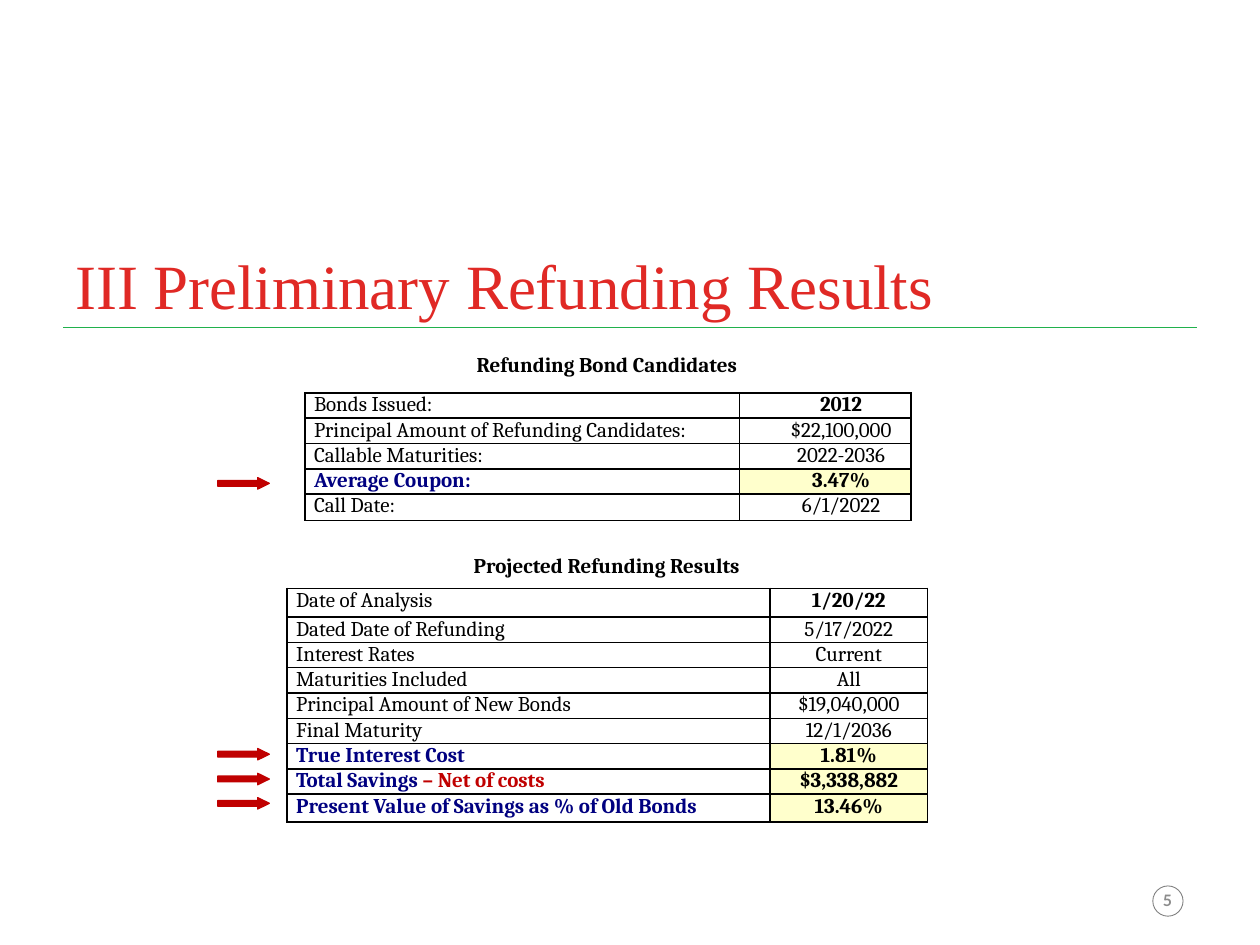
from lxml import etree
from pptx import Presentation
from pptx.dml.color import RGBColor
from pptx.enum import shapes, text
from pptx.oxml import ns
from pptx.util import Cm, Pt

COLORS = {"title": "E02925", "rule": "20B14C", "ring": "808080", "number": "8C8C8C",
          "text": "000000", "key": "000080", "accent": "C00000", "highlight": "FFFFCC"}
BODY = "Cambria"
TITLE = "III\tPreliminary Refunding Results"
PAGE = "5"

# Each row: label runs as (text, colour), value, style
CANDIDATES = [
    ([("Bonds Issued:", "text")], "2012", "head"),
    ([("Principal Amount of Refunding Candidates:", "text")], "$22,100,000", ""),
    ([("Callable Maturities:", "text")], "2022-2036", ""),
    ([("Average Coupon:", "key")], "3.47%", "key"),
    ([("Call Date:", "text")], "6/1/2022", ""),
]
RESULTS = [
    ([("Date of Analysis", "text")], "1/20/22", "head"),
    ([("Dated Date of Refunding", "text")], "5/17/2022", ""),
    ([("Interest Rates", "text")], "Current", ""),
    ([("Maturities Included", "text")], "All", ""),
    ([("Principal Amount of New Bonds", "text")], "$19,040,000", ""),
    ([("Final Maturity", "text")], "12/1/2036", ""),
    ([("True Interest Cost", "key")], "1.81%", "key"),
    ([("Total Savings ", "key"), ("– Net of costs", "accent")], "$3,338,882", "key"),
    ([("Present Value of Savings as % of Old Bonds", "key")], "13.46%", "key"),
]
# heading, heading box, heading alignment, rows, left, top, column widths,
# first and last row heights, value indent
TABLES = [
    ("Refunding Bond Candidates", (6.99, 6.96, 10.49, 0.76), text.PP_ALIGN.CENTER,
     CANDIDATES, 6.15, 7.92, (8.76, 3.45), (0.51, 0.53), 0.64),
    ("Projected Refunding Results", (9.3, 11.02, 8.81, 0.76), text.PP_ALIGN.LEFT,
     RESULTS, 5.79, 11.86, (9.73, 3.18), (0.58, 0.56), 0),
]
ROW_H = 0.51
ARROW_TOPS = [9.63, 15.09, 15.59, 16.08]


def rgb(name):
    return RGBColor.from_string(COLORS[name])


def add_run(p, words, size, font, color, bold=False):
    r = p.add_run()
    r.text = words
    r.font.size, r.font.name, r.font.bold = Pt(size), font, bold
    r.font.color.rgb = rgb(color)


def add_box(slide, box, anchor, align):
    """Add a wrapping text box and return its first paragraph."""
    tf = slide.shapes.add_textbox(*map(Cm, box)).text_frame
    tf.word_wrap = True
    tf.vertical_anchor = anchor
    p = tf.paragraphs[0]
    p.alignment = align
    return p


def set_indent(p, left, first=0):
    pPr = p._p.get_or_add_pPr()
    pPr.set("marL", str(Cm(left)))
    pPr.set("indent", str(Cm(first)))


def add_borders(cell):
    tcPr = cell._tc.get_or_add_tcPr()
    for i, side in enumerate(("lnL", "lnR", "lnT", "lnB")):
        ln = etree.Element(ns.qn("a:" + side), w=str(Pt(1)))
        fill = etree.SubElement(ln, ns.qn("a:solidFill"))
        etree.SubElement(fill, ns.qn("a:srgbClr"), val=COLORS["text"])
        tcPr.insert(i, ln)


def fill_cell(cell, runs, bold, space):
    cell.margin_left = cell.margin_right = Cm(0.18)
    cell.margin_top = cell.margin_bottom = 0
    p = cell.text_frame.paragraphs[0]
    if space:
        p.space_before = Pt(1)
    for words, color in runs:
        add_run(p, words, 12, BODY, color, bold)
    return p


def add_grid(slide, rows, left, top, widths, ends, indent):
    heights = [ends[0]] + [ROW_H] * (len(rows) - 2) + [ends[1]]
    tbl = slide.shapes.add_table(len(rows), 2, Cm(left), Cm(top),
                                 Cm(sum(widths)), Cm(sum(heights))).table
    tbl.first_row = tbl.horz_banding = False
    for col, width in zip(tbl.columns, widths):
        col.width = Cm(width)
    for i, (label, value, style) in enumerate(rows):
        tbl.rows[i].height = Cm(heights[i])
        name, amount = tbl.cell(i, 0), tbl.cell(i, 1)
        fill_cell(name, label, style == "key", i > 0)
        p = fill_cell(amount, [(value, "text")], style != "", i > 0)
        p.alignment = text.PP_ALIGN.CENTER
        set_indent(p, indent)
        for cell in (name, amount):
            cell.fill.background()
            if cell is amount and style == "key":
                cell.fill.solid()
                cell.fill.fore_color.rgb = rgb("highlight")
            add_borders(cell)


def add_frame(slide):
    """Add the title, its rule and the page number."""
    rule = slide.shapes.add_connector(shapes.MSO_CONNECTOR.STRAIGHT,
                                      Cm(1.27), Cm(6.6), Cm(24.13), Cm(6.6))
    rule.line.color.rgb = rgb("rule")
    rule.line.width = Pt(1)
    etree.SubElement(rule._element.spPr, ns.qn("a:effectLst"))

    ring = slide.shapes.add_shape(shapes.MSO_SHAPE.OVAL, Cm(23.24), Cm(17.86),
                                  Cm(0.61), Cm(0.61))
    ring.shadow.inherit = False
    ring.fill.background()
    ring.line.color.rgb = rgb("ring")
    ring.line.width = Pt(0.5)

    p = add_box(slide, (1.27, 3.43, 22.86, 3.18), text.MSO_ANCHOR.BOTTOM, text.PP_ALIGN.LEFT)
    set_indent(p, 1.57, -1.57)
    p.line_spacing = Pt(37)
    add_run(p, TITLE, 36, "Times New Roman", "title")

    p = add_box(slide, (23.04, 17.96, 0.99, 0.38), text.MSO_ANCHOR.MIDDLE,
                text.PP_ALIGN.CENTER)
    add_run(p, PAGE, 9, "Lato", "number", True)


def add_arrow(slide, top):
    sp = slide.shapes.add_shape(shapes.MSO_SHAPE.RIGHT_ARROW, Cm(4.39), Cm(top),
                                Cm(1.04), Cm(0.23))
    sp.adjustments[0], sp.adjustments[1] = 0.5, 1.02
    sp.shadow.inherit = False
    sp.fill.solid()
    sp.fill.fore_color.rgb = sp.line.color.rgb = rgb("accent")
    sp.line.width = Pt(0.75)


def main():
    prs = Presentation()
    prs.slide_width, prs.slide_height = Cm(25.4), Cm(19.05)
    slide = prs.slides.add_slide(prs.slide_layouts[6])
    add_frame(slide)
    for heading, box, align, *grid in TABLES:
        p = add_box(slide, box, text.MSO_ANCHOR.MIDDLE, align)
        add_run(p, heading, 12, BODY, "text", True)
        add_grid(slide, *grid)
    for top in ARROW_TOPS:
        add_arrow(slide, top)
    prs.save("out.pptx")


if __name__ == "__main__":
    main()
